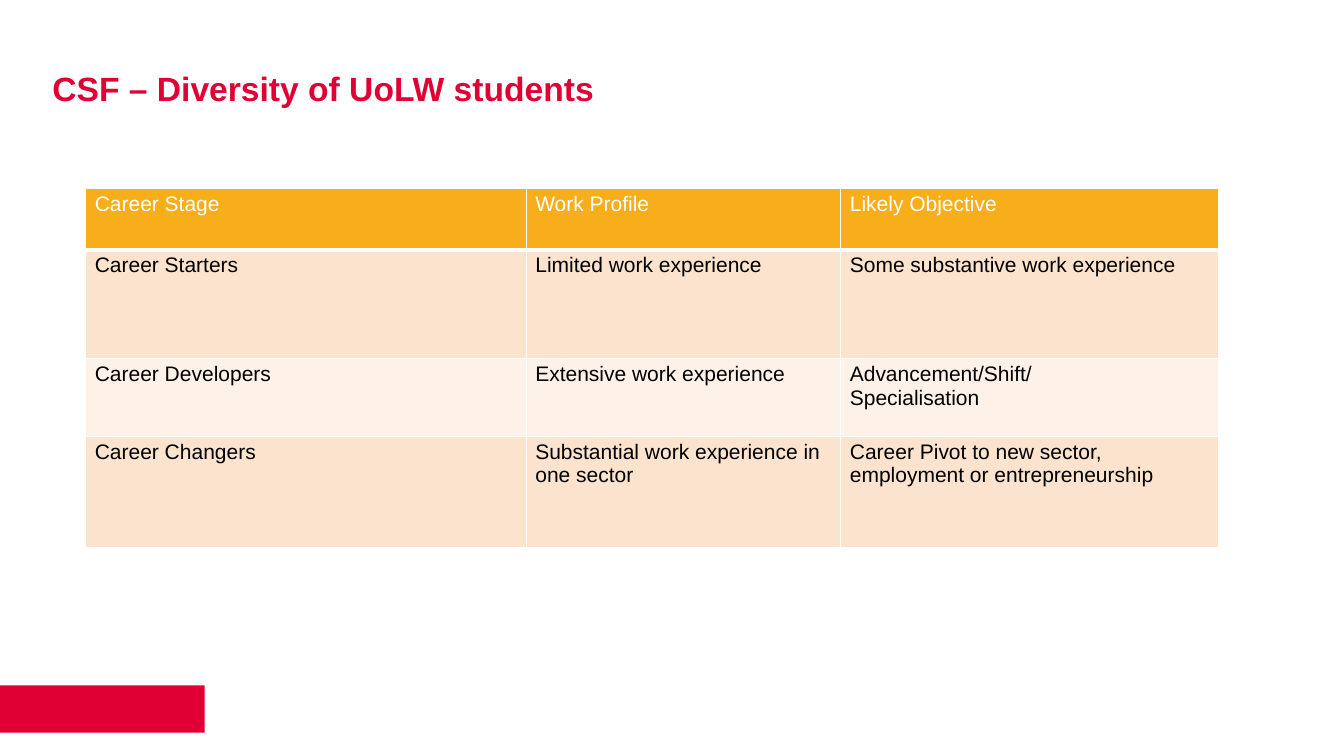
"""Build the slide on the diversity of UoLW students."""
from lxml import etree
from pptx import Presentation
from pptx.dml.color import RGBColor
from pptx.enum.shapes import MSO_SHAPE
from pptx.enum.text import MSO_ANCHOR, PP_ALIGN
from pptx.oxml.ns import qn
from pptx.util import Inches, Pt

RECTANGLE = MSO_SHAPE.RECTANGLE
BOTTOM = MSO_ANCHOR.BOTTOM
LEFT = PP_ALIGN.LEFT
RED = RGBColor(0xE0, 0x00, 0x34)
ORANGE = RGBColor(0xF8, 0xAD, 0x1B)
PEACH = RGBColor(0xFC, 0xE3, 0xCD)
CREAM = RGBColor(0xFE, 0xF1, 0xE8)
WHITE = RGBColor(0xFF, 0xFF, 0xFF)
BLACK = RGBColor(0x00, 0x00, 0x00)
FONT = "Arial"

COL_WIDTHS = [4.37, 3.12, 3.75]
ROW_HEIGHTS = [0.61, 1.08, 0.77, 1.1]
ROW_FILLS = [ORANGE, PEACH, CREAM, PEACH]
CAREERS = [
    ["Career Stage", "Work Profile", "Likely Objective"],
    ["Career Starters", "Limited work experience", "Some substantive work experience"],
    ["Career Developers", "Extensive work experience", "Advancement/Shift/\nSpecialisation"],
    ["Career Changers", "Substantial work experience in one sector",
     "Career Pivot to new sector, employment or entrepreneurship"],
]


def add_run(p, text, size, color, bold):
    r = p.add_run()
    r.text = text
    r.font.name = FONT
    r.font.size = Pt(size)
    r.font.bold = bold
    r.font.color.rgb = color


def set_borders(cell, bottom_width):
    tcPr = cell._tc.get_or_add_tcPr()
    widths = {"a:lnL": 1, "a:lnR": 1, "a:lnT": 1, "a:lnB": bottom_width}
    for tag, width in widths.items():
        ln = etree.SubElement(tcPr, qn(tag), w=str(Pt(width)))
        fill = etree.SubElement(ln, qn("a:solidFill"))
        etree.SubElement(fill, qn("a:srgbClr"), val=str(WHITE))


prs = Presentation()
prs.slide_width = Inches(13.33)
prs.slide_height = Inches(7.5)
s = prs.slides.add_slide(prs.slide_layouts[5])

sp = s.shapes.add_shape(RECTANGLE, Inches(0), Inches(6.8), Inches(2.03), Inches(0.47))
sp.shadow.inherit = False
sp.fill.solid()
sp.fill.fore_color.rgb = RED
sp.line.fill.background()

title = s.shapes.title
title.left, title.top = Inches(0.52), Inches(0)
title.width, title.height = Inches(12.24), Inches(1.07)
tf = title.text_frame
tf.margin_left = tf.margin_top = tf.margin_right = tf.margin_bottom = 0
tf.vertical_anchor = BOTTOM
tf.word_wrap = True
p = tf.paragraphs[0]
p.alignment = LEFT
add_run(p, "CSF – Diversity of UoLW students", 24, RED, True)

table = s.shapes.add_table(
    len(ROW_HEIGHTS), len(COL_WIDTHS), Inches(0.85), Inches(1.87),
    Inches(sum(COL_WIDTHS)), Inches(sum(ROW_HEIGHTS))).table
for column, width in zip(table.columns, COL_WIDTHS):
    column.width = Inches(width)

for i, (row, height) in enumerate(zip(table.rows, ROW_HEIGHTS)):
    row.height = Inches(height)
    header = i == 0
    for cell, text in zip(row.cells, CAREERS[i]):
        cell.margin_left = cell.margin_right = Inches(0.09)
        cell.margin_top = cell.margin_bottom = Inches(0.04)
        set_borders(cell, 3 if header else 1)
        cell.fill.solid()
        cell.fill.fore_color.rgb = ROW_FILLS[i]
        tf = cell.text_frame
        for j, line in enumerate(text.split("\n")):
            p = tf.add_paragraph() if j else tf.paragraphs[0]
            add_run(p, line, 15, WHITE if header else BLACK, False)

prs.save("out.pptx")
